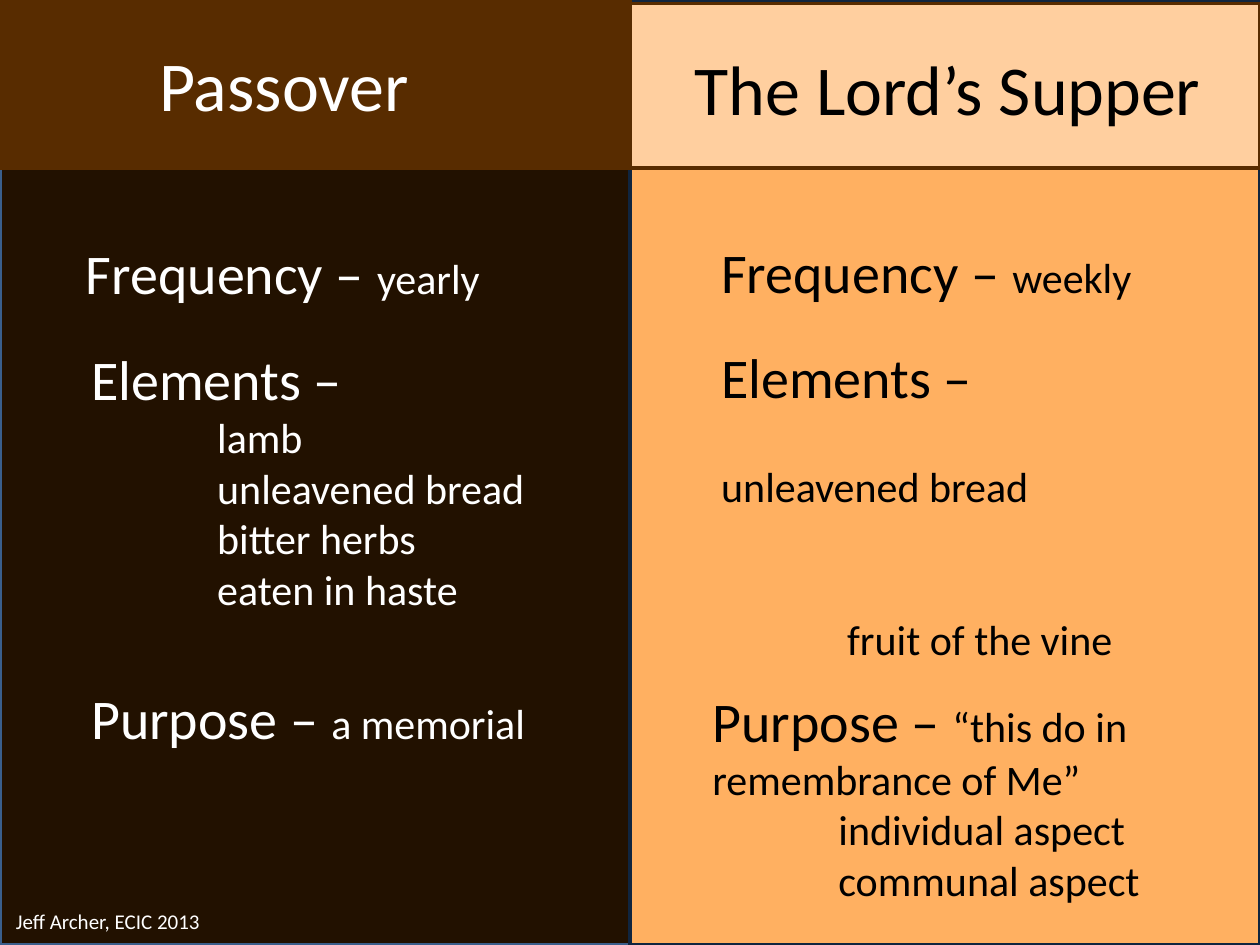
from pptx import Presentation
from pptx.dml.color import RGBColor
from pptx.enum.shapes import MSO_SHAPE
from pptx.util import Pt

COLORS = {
    "background": "321900", "dark": "221100", "orange": "FFB061",
    "brown": "582C00", "peach": "FFCF9F", "blue": "3A5F8C",
    "navy": "10253F", "white": "FFFFFF", "black": "000000",
}
FONT = "Calibri"
HEADING, DETAIL, TITLE, CREDIT = 32, 24, 40, 12
LINE = 29.3  # height of one line of detail text
COLUMN_WIDTH, SLIDE_HEIGHT = 360, 540


def color(name):
    return RGBColor.from_string(COLORS[name])


def add_panel(slide, box, fill, line):
    shape = slide.shapes.add_shape(MSO_SHAPE.RECTANGLE, *map(Pt, box))
    shape.shadow.inherit = False
    shape.fill.solid()
    shape.fill.fore_color.rgb = color(fill)
    shape.line.color.rgb = color(line)
    shape.line.width = Pt(2)


def add_text(slide, box, paragraphs, text_color):
    """Each paragraph is (runs, indent, space before); a run is (text, size)."""
    text_frame = slide.shapes.add_textbox(*map(Pt, box)).text_frame
    text_frame.word_wrap = True
    for index, (runs, indent, space_before) in enumerate(paragraphs):
        paragraph = text_frame.paragraphs[0] if index == 0 else text_frame.add_paragraph()
        paragraph.space_before = Pt(space_before)
        if indent:
            paragraph._p.get_or_add_pPr().set("marL", str(Pt(indent)))
        for text, size in runs:
            run = paragraph.add_run()
            run.text = text
            run.font.name = FONT
            run.font.size = Pt(size)
            run.font.color.rgb = color(text_color)


def topic(heading, detail=""):
    runs = [(f"{heading} – ", HEADING), (detail, DETAIL)] if detail else [(f"{heading} –", HEADING)]
    return runs, 0, 0


def item(text, indent=72, space_before=0):
    return [(text, DETAIL)], indent, space_before


def title(text):
    return [([(text, TITLE)], 0, 0)]


def add_column_text(slide, left, text_color, blocks):
    for (x, y, width, height), paragraphs in blocks:
        add_text(slide, (left + x, y, width, height), paragraphs, text_color)


PASSOVER = [
    ((84, 20, 168, 55.5), title("Passover")),
    ((42, 132.5, 270, 46), [topic("Frequency", "yearly")]),
    ((45, 193.5, 270, 163), [
        topic("Elements"), item("lamb"), item("unleavened bread"),
        item("bitter herbs"), item("eaten in haste")]),
    ((45, 387, 279, 46), [topic("Purpose", "a memorial")]),
    ((2, 515.5, 174, 22), [([("Jeff Archer, ECIC 2013", CREDIT)], 0, 0)]),
]
LORDS_SUPPER = [
    ((30, 22.5, 312, 55.5), title("The Lord’s Supper")),
    ((45, 132, 270, 46), [topic("Frequency", "weekly")]),
    ((45, 192, 270, 191.5), [
        topic("Elements"),
        item("unleavened bread", indent=0, space_before=LINE),
        item("fruit of the vine", space_before=2 * LINE)]),
    ((40, 388.5, 279, 133), [
        topic("Purpose", "“this do in remembrance of Me”"),
        item("individual aspect"), item("communal aspect")]),
]


def build_comparison(slide):
    slide.background.fill.solid()
    slide.background.fill.fore_color.rgb = color("background")
    right = COLUMN_WIDTH
    add_panel(slide, (0, 0, COLUMN_WIDTH, SLIDE_HEIGHT), "dark", "blue")
    add_panel(slide, (right, 0, COLUMN_WIDTH, SLIDE_HEIGHT), "orange", "navy")
    add_panel(slide, (0, 0, COLUMN_WIDTH, 96), "brown", "brown")
    add_panel(slide, (right, 2, COLUMN_WIDTH, 94), "peach", "brown")
    add_column_text(slide, 0, "white", PASSOVER)
    add_column_text(slide, right, "black", LORDS_SUPPER)


def main():
    presentation = Presentation()
    presentation.slide_width = Pt(2 * COLUMN_WIDTH)
    presentation.slide_height = Pt(SLIDE_HEIGHT)
    build_comparison(presentation.slides.add_slide(presentation.slide_layouts[6]))
    presentation.save("out.pptx")


if __name__ == "__main__":
    main()
